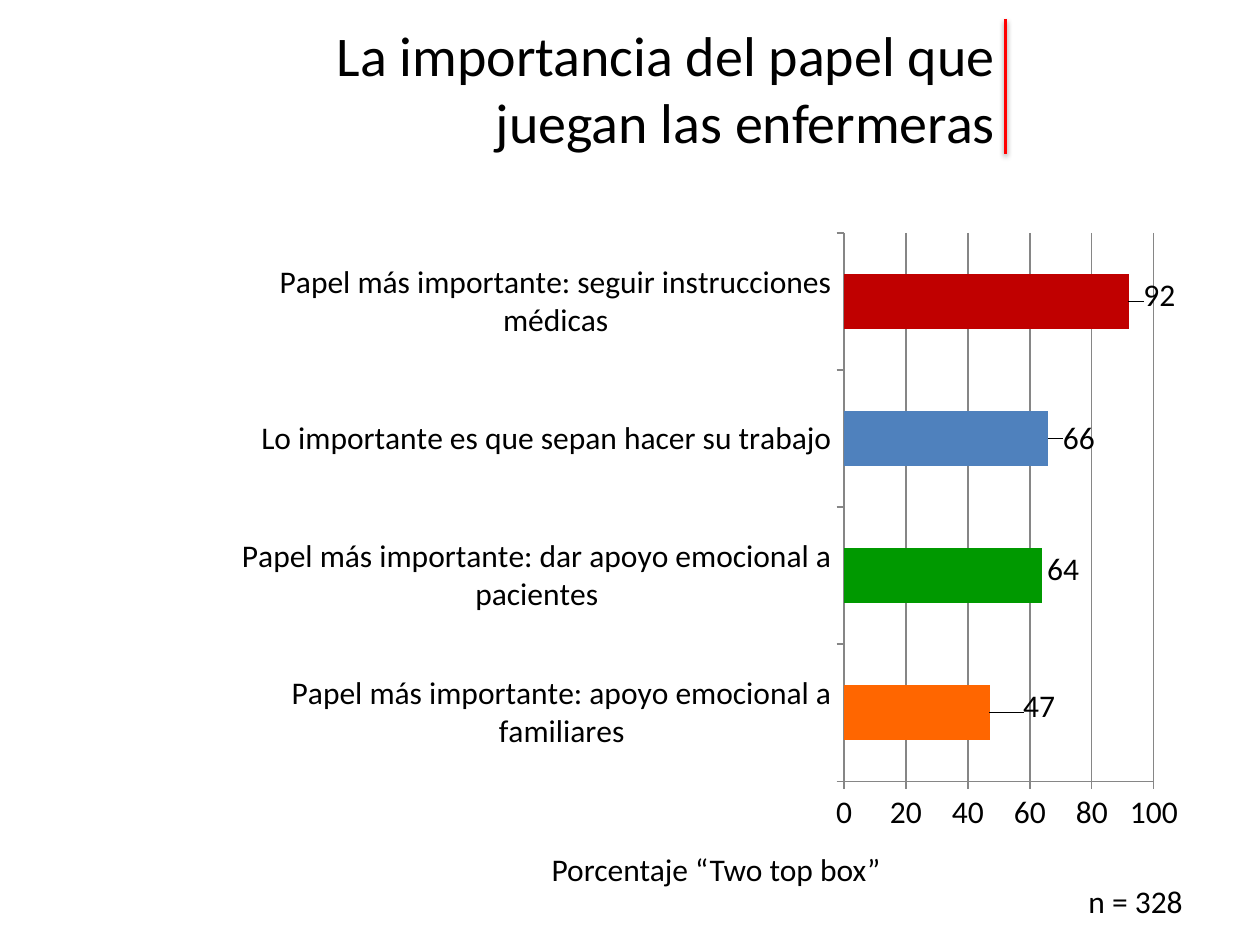
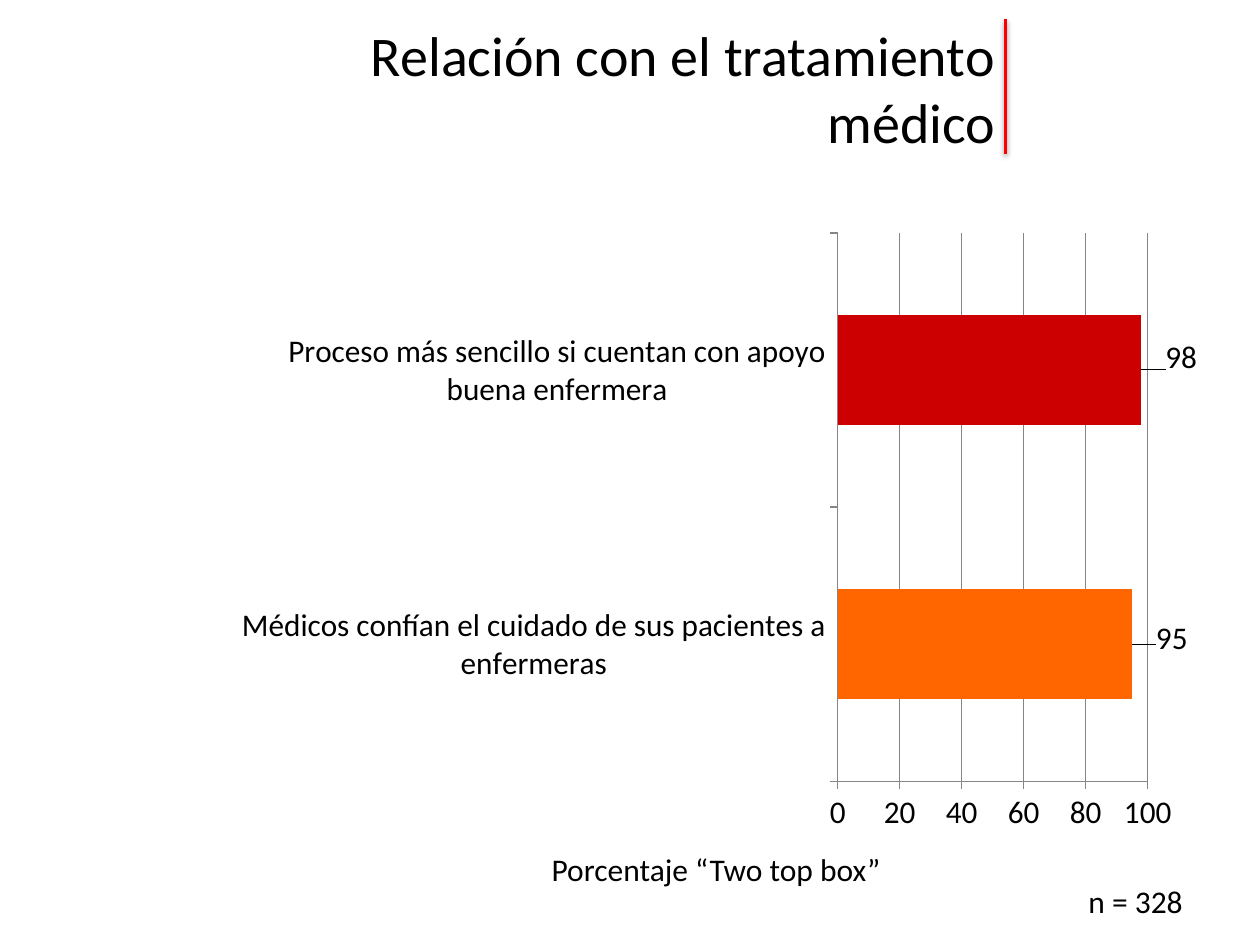
from dataclasses import dataclass

from lxml.etree import SubElement
from pptx import Presentation
from pptx.chart.data import CategoryChartData
from pptx.dml.color import RGBColor
from pptx.enum.chart import XL_CHART_TYPE, XL_LABEL_POSITION, XL_TICK_MARK
from pptx.enum.shapes import MSO_CONNECTOR
from pptx.enum.text import MSO_ANCHOR, MSO_AUTO_SIZE, PP_ALIGN
from pptx.oxml import parse_xml
from pptx.oxml.ns import nsdecls, qn
from pptx.util import Inches, Pt


@dataclass(frozen=True)
class Theme:
    """Fonts, type sizes and colours shared by the slides."""

    font: str = "Calibri"
    title_size: int = 32
    text_size: int = 18
    text: str = "000000"
    accent: str = "FF0000"
    axis: str = "868686"
    blue: str = "4F81BD"
    green: str = "009900"
    orange: str = "FF6600"
    dark_red: str = "C00000"
    red: str = "CC0000"


@dataclass(frozen=True)
class Bar:
    """One bar, with its label offset as a fraction of the chart size."""

    category: str
    value: int
    color: str
    offset: tuple


THEME = Theme()

SLIDES = [
    ("La importancia del papel que juegan las enfermeras", [
        Bar("Papel más importante: apoyo emocional a familiares", 47, THEME.orange, (0.03, -0.01)),
        Bar("Papel más importante: dar apoyo emocional a pacientes", 64, THEME.green, (0, -0.01)),
        Bar("Lo importante es que sepan hacer su trabajo", 66, THEME.blue, (0.01, 0)),
        Bar("Papel más importante: seguir instrucciones médicas", 92, THEME.dark_red, (0.01, -0.01)),
    ]),
    ("Relación con el tratamiento médico", [
        Bar("Médicos confían el cuidado de sus pacientes a enfermeras", 95, THEME.orange, (0.02, -0.01)),
        Bar("Proceso más sencillo si cuentan con apoyo buena enfermera", 98, THEME.red, (0.02, -0.02)),
    ]),
]


def rgb(color):
    """Turn a hexadecimal string into a colour."""
    return RGBColor.from_string(color)


def style_font(font, size):
    """Apply the theme's face and text colour at a size."""
    font.name = THEME.font
    font.size = Pt(size)
    font.color.rgb = rgb(THEME.text)


def add_run(paragraph, text, size):
    """Add one formatted run."""
    run = paragraph.add_run()
    run.text = text
    style_font(run.font, size)


def add_title(slide, text):
    """Place the right-aligned title beside the red rule."""
    title = slide.shapes.title
    title.left, title.top = Inches(1.92), Inches(0.07)
    title.width, title.height = Inches(6.08), Inches(1.25)
    title.text_frame.vertical_anchor = MSO_ANCHOR.MIDDLE
    paragraph = title.text_frame.paragraphs[0]
    paragraph.alignment = PP_ALIGN.RIGHT
    add_run(paragraph, text, THEME.title_size)


def add_title_rule(slide):
    """Draw the red vertical rule with its soft shadow."""
    rule = slide.shapes.add_connector(
        MSO_CONNECTOR.STRAIGHT, Inches(7.98), Inches(0.15), Inches(7.98), Inches(1.22))
    rule.line.color.rgb = rgb(THEME.accent)
    rule.line.width = Pt(2)
    rule.element.spPr.append(parse_xml(
        f'<a:effectLst {nsdecls("a")}>'
        '<a:outerShdw blurRad="40000" dist="20000" dir="5400000" rotWithShape="0">'
        '<a:srgbClr val="000000"><a:alpha val="38000"/></a:srgbClr>'
        '</a:outerShdw></a:effectLst>'))


def add_note(slide, text, left, top, width):
    """Add a one-line text box."""
    box = slide.shapes.add_textbox(Inches(left), Inches(top), Inches(width), Inches(0.4))
    box.text_frame.word_wrap = False
    box.text_frame.auto_size = MSO_AUTO_SIZE.SHAPE_TO_FIT_TEXT
    add_run(box.text_frame.paragraphs[0], text, THEME.text_size)


def style_line(line):
    """Apply the thin grey of axes and gridlines."""
    line.color.rgb = rgb(THEME.axis)
    line.width = Pt(0.75)


def style_axes(chart):
    """Set scale, ticks and gridlines."""
    for axis in (chart.category_axis, chart.value_axis):
        axis.major_tick_mark = XL_TICK_MARK.OUTSIDE
        axis.minor_tick_mark = XL_TICK_MARK.NONE
        style_line(axis.format.line)
    value_axis = chart.value_axis
    value_axis.minimum_scale, value_axis.maximum_scale = 0, 100
    value_axis.major_unit = 20
    value_axis.has_major_gridlines = True
    style_line(value_axis.major_gridlines.format.line)


def offset_labels(chart, bars):
    """Shift each value label from its place at the bar end."""
    for label, bar in zip(chart.element.xpath(".//c:dLbl"), bars):
        for old_layout in label.findall(qn("c:layout")):
            label.remove(old_layout)
        layout = SubElement(label, qn("c:layout"))
        label.insert(1, layout)
        manual = SubElement(layout, qn("c:manualLayout"))
        for axis_name, shift in zip("xy", bar.offset):
            SubElement(manual, qn(f"c:{axis_name}")).set("val", str(shift))


def add_bar_chart(slide, bars):
    """Add the horizontal bar chart with one colour a bar."""
    data = CategoryChartData()
    data.categories = [bar.category for bar in bars]
    data.add_series("Series 1", [bar.value for bar in bars])
    chart = slide.shapes.add_chart(
        XL_CHART_TYPE.BAR_CLUSTERED, Inches(1.92), Inches(1.75),
        Inches(7.58), Inches(4.95), data).chart
    chart.has_legend = False
    chart.has_title = False
    style_font(chart.font, THEME.text_size)
    style_axes(chart)
    plot = chart.plots[0]
    plot.gap_width = 150
    plot.vary_by_categories = False
    series = plot.series[0]
    series.format.fill.solid()
    series.format.fill.fore_color.rgb = rgb(THEME.blue)
    series.data_labels.show_value = True
    for index, bar in enumerate(bars):
        point = series.points[index]
        point.format.fill.solid()
        point.format.fill.fore_color.rgb = rgb(bar.color)
        point.data_label.position = XL_LABEL_POSITION.OUTSIDE_END
    offset_labels(chart, bars)


def add_result_slide(presentation, title, bars):
    """Build one survey result slide."""
    slide = presentation.slides.add_slide(presentation.slide_layouts.get_by_name("Title Only"))
    add_title_rule(slide)
    add_note(slide, "n = 328", 8.54, 6.95, 0.96)
    add_title(slide, title)
    add_bar_chart(slide, bars)
    add_note(slide, "Porcentaje “Two top box”", 4.28, 6.7, 2.83)


def main():
    """Build and save the presentation."""
    presentation = Presentation()
    presentation.slide_width, presentation.slide_height = Inches(10), Inches(7.5)
    for title, bars in SLIDES:
        add_result_slide(presentation, title, bars)
    presentation.save("out.pptx")


if __name__ == "__main__":
    main()
